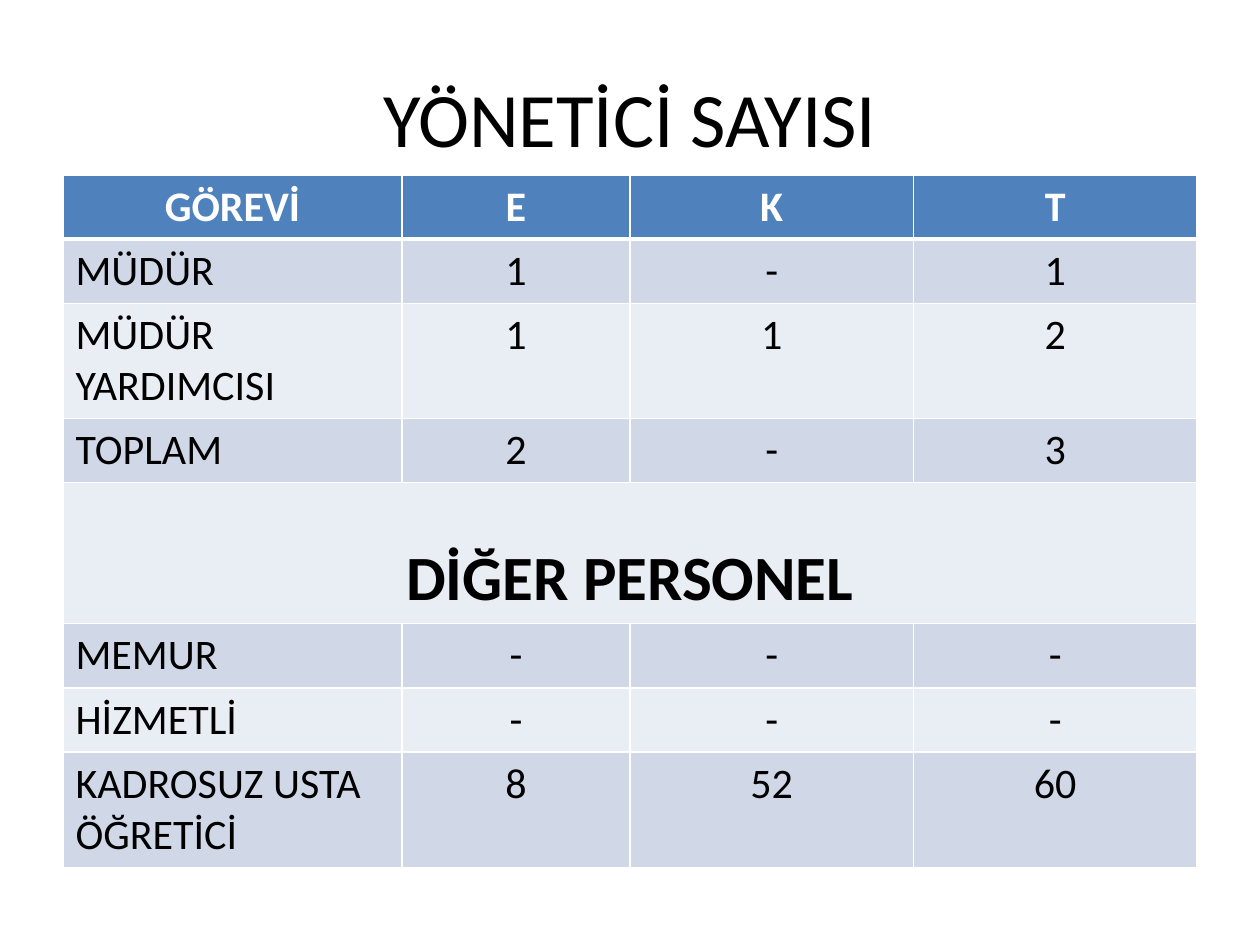
from pptx import Presentation
from pptx.dml.color import RGBColor
from pptx.enum.text import MSO_ANCHOR as Anchor, PP_ALIGN as Align
from pptx.oxml import parse_xml
from pptx.oxml.ns import nsdecls
from pptx.util import Inches, Pt

COLUMN_WIDTHS = [2.69, 1.81, 2.25, 2.25]
ROWS = [
    (0.5, ["GÖREVİ", "E", "K", "T"]),
    (0.51, ["MÜDÜR", "1", "-", "1"]),
    (0.91, ["MÜDÜR YARDIMCISI", "1", "1", "2"]),
    (0.51, ["TOPLAM", "2", "-", "3"]),
    (1.12, ["DİĞER PERSONEL"]),
    (0.51, ["MEMUR", "-", "-", "-"]),
    (0.51, ["HİZMETLİ", "-", "-", "-"]),
    (0.91, ["KADROSUZ USTA ÖĞRETİCİ", "8", "52", "60"]),
]


def color(value):
    return RGBColor.from_string(value)


def write(frame, text, size=24, ink="000000", bold=False, align=Align.CENTER):
    para = frame.paragraphs[0]
    para.alignment = align
    span = para.add_run()
    span.text = text
    font = span.font
    font.name, font.size, font.bold = "Calibri", Pt(size), bold
    font.color.rgb = color(ink)


class StaffSlide:
    header_fill = "4F81BD"
    band_fills = ["E9EDF4", "D0D8E8"]
    line_color = "FFFFFF"

    def __init__(self, deck):
        self.page = deck.slides.add_slide(deck.slide_layouts[5])

    def title(self, text, left, top, width, height):
        box = self.page.shapes.title
        box.left, box.top = Inches(left), Inches(top)
        box.width, box.height = Inches(width), Inches(height)
        box.text_frame.vertical_anchor = Anchor.MIDDLE
        write(box.text_frame, text, size=44)

    def borders(self, cell, top=1, bottom=1):
        properties = cell._tc.get_or_add_tcPr()
        sides = {"L": 1, "R": 1, "T": top, "B": bottom}
        for place, (side, points) in enumerate(sides.items()):
            properties.insert(place, parse_xml(
                f'<a:ln{side} {nsdecls("a")} w="{Pt(points)}"><a:solidFill>'
                f'<a:srgbClr val="{self.line_color}"/></a:solidFill></a:ln{side}>'))

    def table(self, rows, widths, left, top):
        heights = [height for height, _ in rows]
        table = self.page.shapes.add_table(
            len(rows), len(widths), Inches(left), Inches(top),
            Inches(sum(widths)), Inches(sum(heights))).table
        for column, width in zip(table.columns, widths):
            column.width = Inches(width)
        for index, (height, texts) in enumerate(rows):
            table.rows[index].height = Inches(height)
            header = index == 0
            section = len(texts) == 1
            for cell in table.rows[index].cells:
                cell.fill.solid()
                fill = self.header_fill if header else self.band_fills[index % 2]
                cell.fill.fore_color.rgb = color(fill)
                self.borders(cell, top=3 if index == 1 else 1, bottom=3 if header else 1)
            if section:
                first = table.cell(index, 0)
                first.merge(table.cell(index, len(widths) - 1))
                first.vertical_anchor = Anchor.BOTTOM
            for column, text in enumerate(texts):
                label = column == 0 and not header and not section
                write(table.cell(index, column).text_frame, text,
                      size=36 if section else 24,
                      ink="FFFFFF" if header else "000000",
                      bold=header or section,
                      align=Align.LEFT if label else Align.CENTER)


def main():
    deck = Presentation()
    deck.slide_width, deck.slide_height = Inches(10), Inches(7.5)
    slide = StaffSlide(deck)
    slide.title("YÖNETİCİ SAYISI", 0.5, 0.3, 9, 1.25)
    slide.table(ROWS, COLUMN_WIDTHS, 0.5, 1.39)
    deck.save("out.pptx")


if __name__ == "__main__":
    main()
